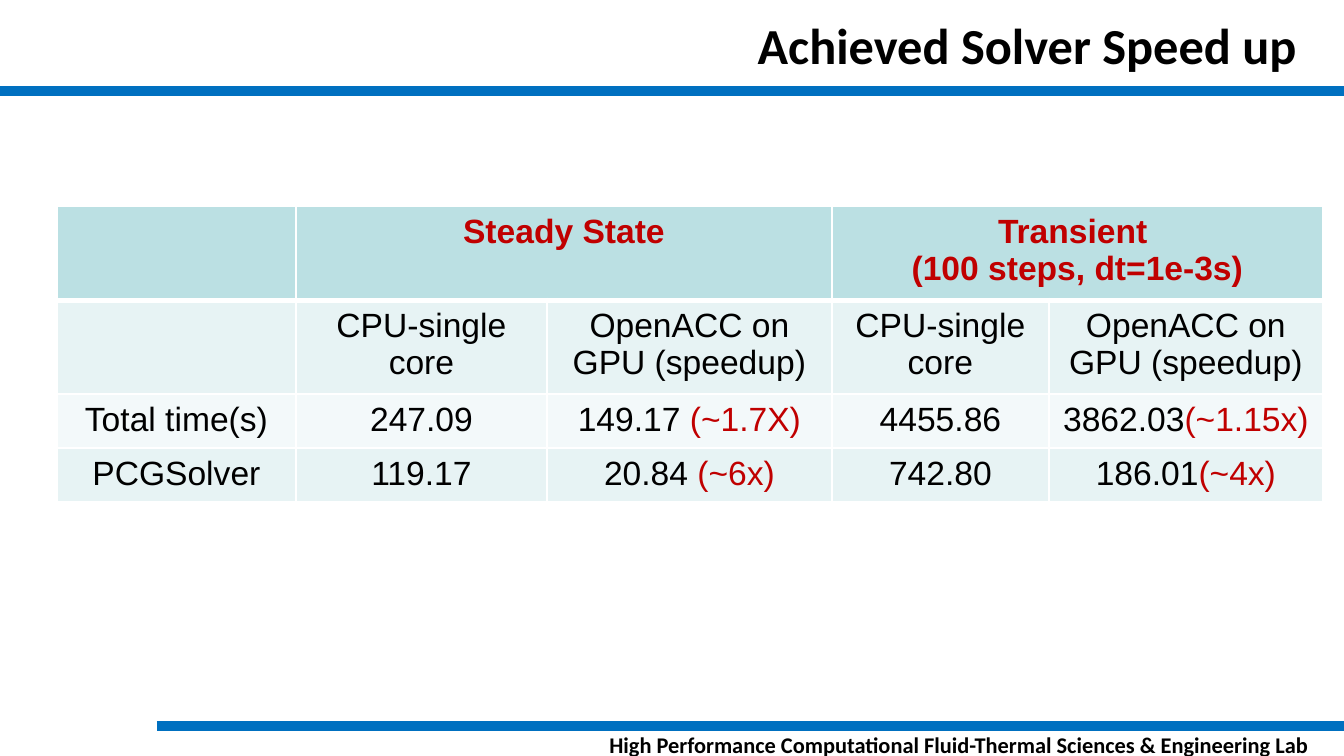
import dataclasses

import lxml.etree
import pptx
import pptx.dml.color
import pptx.enum.shapes
import pptx.enum.text
import pptx.oxml
import pptx.oxml.ns
import pptx.util

PX = 914400 / 134.4
ALIGN = pptx.enum.text.PP_ALIGN


@dataclasses.dataclass(frozen=True)
class Theme:
    heading_font: str = "Calibri"
    table_font: str = "Arial"
    title_size: int = 27
    table_size: int = 18
    footer_size: int = 12
    rule_width: int = 5
    text: str = "000000"
    accent: str = "C00000"
    rule: str = "0070C0"
    border: str = "FFFFFF"
    header_fill: str = "BBE0E3"
    band_fills: tuple = ("E7F3F4", "F3F9FA")


THEME = Theme()

COLUMN_WIDTHS = (239, 251, 285, 217, 274)
ROW_HEIGHTS = (88, 89, 54, 54)
GROUPS = {1: "Steady State", 3: "Transient \n(100 steps, dt=1e-3s)"}
# Each cell is a plain value and its highlighted speedup
VARIANTS = [("CPU-single core", ""), ("OpenACC on GPU (speedup)", "")]
BODY = [
    [("", "")] + VARIANTS * 2,
    [("Total time(s)", ""), ("247.09", ""), ("149.17 ", "(~1.7X)"),
     ("4455.86", ""), ("3862.03", "(~1.15x)")],
    [("PCGSolver", ""), ("119.17", ""), ("20.84 ", "(~6x)"),
     ("742.80", ""), ("186.01", "(~4x)")],
]


def emu(px):
    return pptx.util.Emu(round(px * PX))


def rgb(value):
    return pptx.dml.color.RGBColor.from_string(value)


def style(font, name, size, color, bold):
    font.name = name
    font.size = pptx.util.Pt(size)
    font.bold = bold
    font.color.rgb = rgb(color)


def add_rule(page, left, right, y):
    rule = page.shapes.add_connector(
        pptx.enum.shapes.MSO_CONNECTOR.STRAIGHT, emu(left), emu(y), emu(right), emu(y))
    rule.line.color.rgb = rgb(THEME.rule)
    rule.line.width = pptx.util.Pt(THEME.rule_width)
    lxml.etree.SubElement(rule._element.spPr, pptx.oxml.ns.qn("a:effectLst"))


def place_header(page, left, top, width, height):
    add_rule(page, left, left + width, top + height)
    title = page.shapes.title
    title.left, title.top = emu(left + 23), emu(top + 4)
    title.width, title.height = emu(width - 57), emu(height - 10)
    frame = title.text_frame
    frame.text = "Achieved Solver Speed up"
    frame.auto_size = pptx.enum.text.MSO_AUTO_SIZE.NONE
    frame.vertical_anchor = pptx.enum.text.MSO_ANCHOR.MIDDLE
    para = frame.paragraphs[0]
    para.alignment = ALIGN.RIGHT
    style(para.runs[0].font, THEME.heading_font, THEME.title_size, THEME.text, True)


def place_footer(page, left, top, width, height):
    add_rule(page, left, left + width, top)
    box = page.shapes.add_textbox(
        emu(left + 432), emu(top + 5), emu(width - 467), emu(height - 3))
    frame = box.text_frame
    frame.word_wrap = True
    frame.margin_left = frame.margin_right = 0
    frame.margin_top = frame.margin_bottom = 0
    frame.text = "High Performance Computational Fluid-Thermal Sciences & Engineering Lab"
    para = frame.paragraphs[0]
    para.alignment = ALIGN.RIGHT
    style(para.runs[0].font, THEME.heading_font, THEME.footer_size, THEME.text, True)


def format_cell(cell, fill, top_border=1, bottom_border=1):
    properties = cell._tc.get_or_add_tcPr()
    # Borders come before the fill in the cell properties
    for side, points in (("L", 1), ("R", 1), ("T", top_border), ("B", bottom_border)):
        properties.append(pptx.oxml.parse_xml(
            f'<a:ln{side} {pptx.oxml.ns.nsdecls("a")} w="{pptx.util.Pt(points)}">'
            f'<a:solidFill><a:srgbClr val="{THEME.border}"/></a:solidFill></a:ln{side}>'))
    cell.fill.solid()
    cell.fill.fore_color.rgb = rgb(fill)


def place_table(page, left, top):
    table = page.shapes.add_table(
        len(ROW_HEIGHTS), len(COLUMN_WIDTHS), emu(left), emu(top),
        emu(sum(COLUMN_WIDTHS)), emu(sum(ROW_HEIGHTS))).table
    table.first_row = table.horz_banding = False
    for column, width in zip(table.columns, COLUMN_WIDTHS):
        column.width = emu(width)
    for row, height in zip(table.rows, ROW_HEIGHTS):
        row.height = emu(height)

    # Group headings, each over two columns
    for index in range(len(COLUMN_WIDTHS)):
        format_cell(table.cell(0, index), THEME.header_fill, bottom_border=3)
    for index, heading in GROUPS.items():
        cell = table.cell(0, index)
        cell.merge(table.cell(0, index + 1))
        cell.text_frame.text = heading
        for para in cell.text_frame.paragraphs:
            para.alignment = ALIGN.CENTER
            style(para.runs[0].font, THEME.table_font, THEME.table_size, THEME.accent, True)

    # Column headings and measurements
    for row_index, values in enumerate(BODY, start=1):
        fill = THEME.band_fills[(row_index - 1) % 2]
        for column_index, parts in enumerate(values):
            cell = table.cell(row_index, column_index)
            format_cell(cell, fill, top_border=3 if row_index == 1 else 1)
            para = cell.text_frame.paragraphs[0]
            para.alignment = ALIGN.CENTER
            for part, color in zip(parts, (THEME.text, THEME.accent)):
                if part:
                    span = para.add_run()
                    span.text = part
                    style(span.font, THEME.table_font, THEME.table_size, color, False)


def main():
    deck = pptx.Presentation()
    deck.slide_width, deck.slide_height = emu(1344), emu(756)
    page = deck.slides.add_slide(deck.slide_layouts.get_by_name("Title Only"))
    place_footer(page, 157, 726, 1187, 30)
    place_header(page, 0, 0, 1344, 91)
    place_table(page, 57, 206)
    deck.save("out.pptx")


if __name__ == "__main__":
    main()
